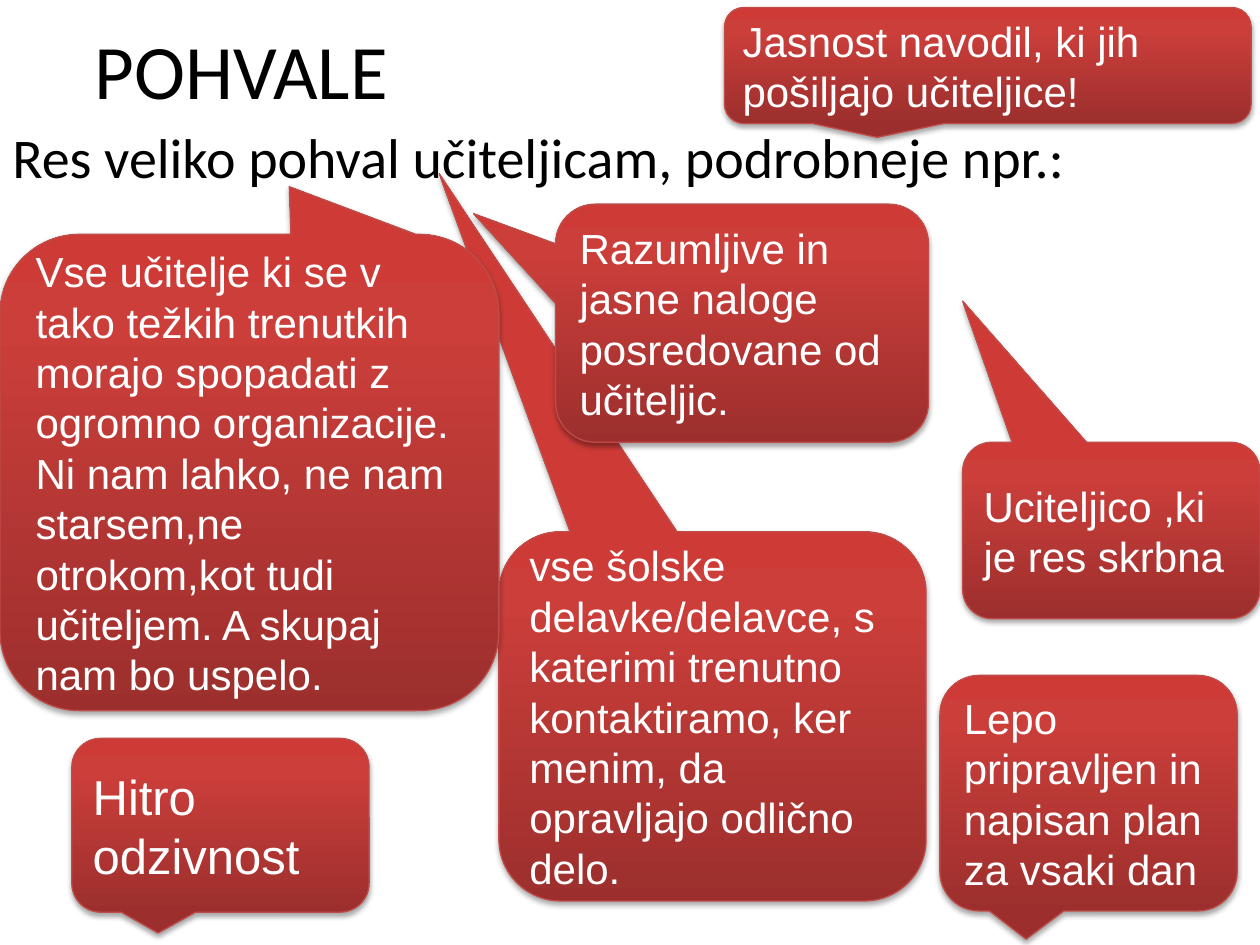
from copy import deepcopy

from lxml.etree import SubElement
from pptx import Presentation
from pptx.dml.color import RGBColor
from pptx.enum.shapes import MSO_SHAPE as Shape
from pptx.enum.text import MSO_ANCHOR as Anchor, PP_ALIGN as Align
from pptx.oxml.ns import qn
from pptx.util import Inches, Pt

WIDTH, HEIGHT = Inches(10), Inches(7.5)
COLORS = {
    "ink": "000000",
    "paper": "FFFFFF",
    "edge": "BF4C48",
    "deep": "9C2F2D",
    "mid": "CB3E3A",
    "bright": "CE3B37",
}
GRADIENT = [(0, "deep"), (0.8, "mid"), (1, "bright")]
PLAIN_TAIL = (-0.21, 0.62)
CALLOUTS = [
    ((39.6, 56.27, 33.9, 39.07), (-0.64, -1.47), 24,
     "vse šolske delavke/delavce, s katerimi trenutno kontaktiramo, "
     "ker menim, da opravljajo odlično delo."),
    ((44.1, 21.6, 29.6, 25.2), (-0.72, -0.46), 24,
     "Razumljive in jasne naloge posredovane od učiteljic."),
    ((0, 24.8, 39.6, 50.4), (0.08, -0.6), 24,
     "Vse učitelje ki se v tako težkih trenutkih morajo spopadati z "
     "ogromno organizacije. Ni nam lahko, ne nam starsem,ne "
     "otrokom,kot tudi učiteljem. A skupaj nam bo uspelo."),
    ((5.7, 78.13, 23.6, 18.4), PLAIN_TAIL, 28, "Hitro odzivnost"),
    ((57.5, 0.8, 41.8, 12.27), PLAIN_TAIL, 24,
     "Jasnost navodil, ki jih pošiljajo učiteljice!"),
    ((76.4, 46.8, 23.6, 18.67), (-0.5, -1.3), 24,
     "Uciteljico ,ki je res skrbna"),
    ((74.6, 71.47, 23.6, 24.93), PLAIN_TAIL, 24,
     "Lepo pripravljen in napisan plan za vsaki dan"),
]


def color(name):
    """Return the named colour."""
    return RGBColor.from_string(COLORS[name])


def place(left, top, width, height):
    """Turn percentages of the slide into lengths."""
    return [round(share * side / 100) for share, side in
            zip((left, top, width, height), (WIDTH, HEIGHT) * 2)]


def write(shape, text, size, face, ink, align=Align.LEFT, anchor=Anchor.MIDDLE):
    """Put one wrapped paragraph into a shape and return it."""
    frame = shape.text_frame
    frame.word_wrap = True
    frame.vertical_anchor = anchor
    para = frame.paragraphs[0]
    para.text = text
    para.alignment = align
    para.font.size = Pt(size)
    para.font.name = face
    para.font.color.rgb = color(ink)
    return para


def add_text(page, area, text, size, **layout):
    """Add a plain text box and return its paragraph."""
    box = page.shapes.add_textbox(*place(*area))
    return write(box, text, size, "Calibri", "ink", **layout)


def paint_gradient(shape):
    """Fill a shape with the red gradient, dark at the bottom."""
    fill = shape.fill
    fill.gradient()
    fill.gradient_angle = 90
    stops = shape._element.spPr.find(".//" + qn("a:gsLst"))
    stops.append(deepcopy(stops[-1]))
    for stop, (position, name) in zip(fill.gradient_stops, GRADIENT):
        stop.position = position
        stop.color.rgb = color(name)


def cast_shadow(shape):
    """Give a shape a soft shadow straight below it."""
    shape.shadow.inherit = False
    effects = shape._element.spPr.find(qn("a:effectLst"))
    shadow = SubElement(effects, qn("a:outerShdw"), blurRad=str(Pt(3.1)),
                        dist=str(Pt(1.8)), dir="5400000", rotWithShape="0")
    tint = SubElement(shadow, qn("a:srgbClr"), val=COLORS["ink"])
    SubElement(tint, qn("a:alpha"), val="35000")


def add_callout(page, area, tail, size, text):
    """Add a red speech bubble with its tail at the given offset."""
    bubble = page.shapes.add_shape(Shape.ROUNDED_RECTANGULAR_CALLOUT, *place(*area))
    bubble.adjustments[0], bubble.adjustments[1] = tail
    paint_gradient(bubble)
    bubble.line.color.rgb = color("edge")
    bubble.line.width = Pt(0.75)
    cast_shadow(bubble)
    write(bubble, text, size, "Arial", "paper")


def main():
    """Build the slide of praise and save it."""
    deck = Presentation()
    deck.slide_width, deck.slide_height = WIDTH, HEIGHT
    page = deck.slides.add_slide(deck.slide_layouts[6])
    add_text(page, (0, 0, 38.3, 14.53), "POHVALE", 44, align=Align.CENTER)
    lead = add_text(page, (0, 12.27, 95, 77.07),
                    "Res veliko pohval učiteljicam, podrobneje npr.:", 32,
                    anchor=Anchor.TOP)
    lead.space_before = Pt(6.4)
    for callout in CALLOUTS:
        add_callout(page, *callout)
    deck.save("out.pptx")


if __name__ == "__main__":
    main()
